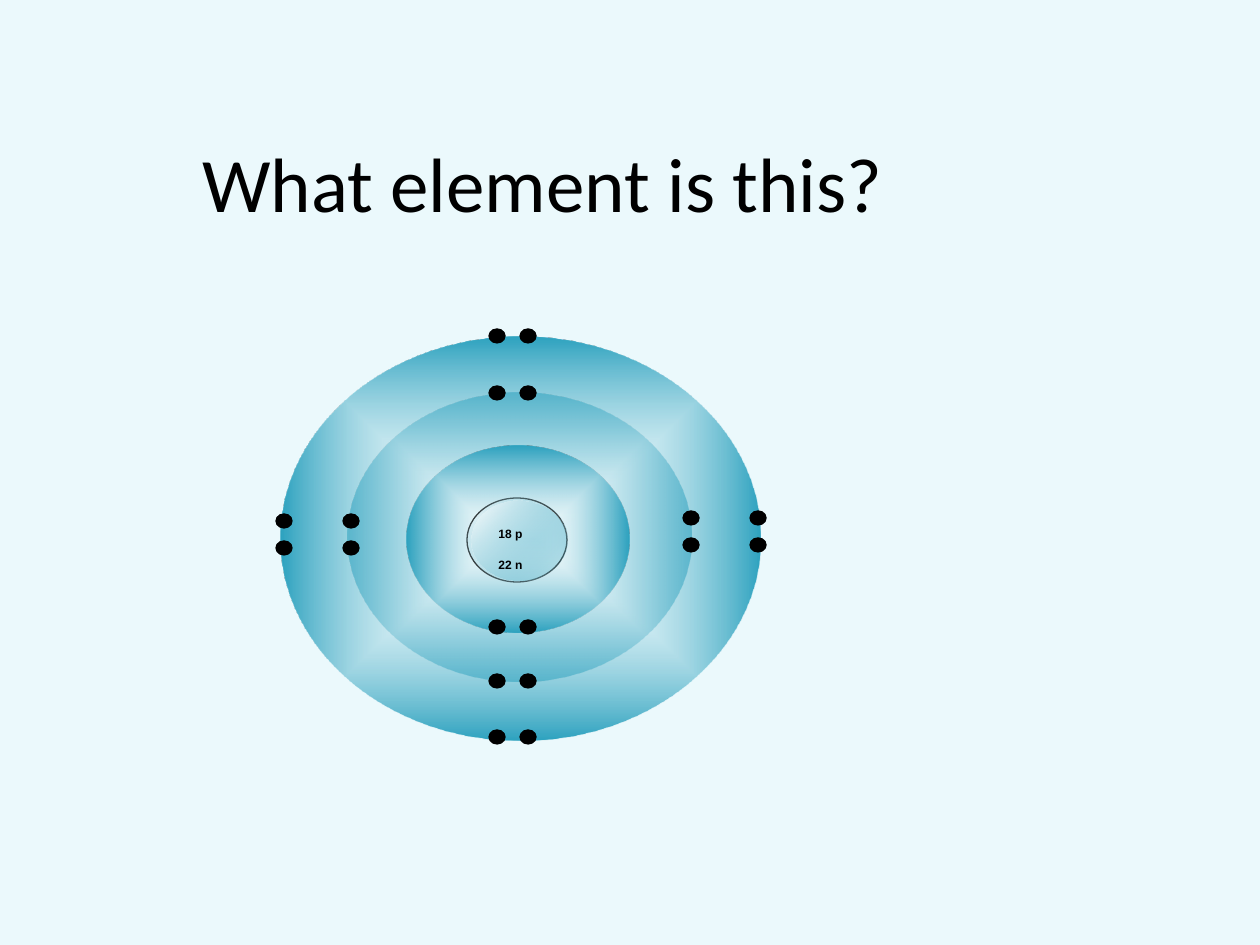
from itertools import product

from lxml.etree import SubElement
from pptx import Presentation
from pptx.dml.color import RGBColor
from pptx.enum.shapes import MSO_SHAPE
from pptx.enum.text import MSO_ANCHOR, MSO_AUTO_SIZE, PP_ALIGN
from pptx.oxml import parse_xml
from pptx.oxml.ns import nsdecls
from pptx.util import Emu, Pt

SCALE = 914400 / 126
BACKGROUND = RGBColor(0xEB, 0xF9, 0xFC)
BLACK = RGBColor(0, 0, 0)
WHITE = RGBColor(0xFF, 0xFF, 0xFF)
TEAL = RGBColor(0x2D, 0xA2, 0xBF)
CENTRE_OUT = ('<a:path path="shape"><a:fillToRect l="50000" t="50000" '
              'r="50000" b="50000"/></a:path>')
DIAGONAL = '<a:lin ang="2700000" scaled="1"/>'


def add_ellipse(shapes, *box):
    shape = shapes.add_shape(MSO_SHAPE.OVAL, *[Emu(round(px * SCALE)) for px in box])
    shape.shadow.inherit = False
    shape.line.fill.background()
    return shape


def fill_gradient(shape, white_alpha, teal_alpha, direction):
    gradient = parse_xml(
        f'<a:gradFill {nsdecls("a")} rotWithShape="1"><a:gsLst/>{direction}</a:gradFill>')
    for position, color, alpha in ((0, WHITE, white_alpha), (100, TEAL, teal_alpha)):
        stop = SubElement(gradient[0], gradient[0].tag.replace("gsLst", "gs"),
                          pos=str(position * 1000))
        stop.append(parse_xml(f'<a:srgbClr {nsdecls("a")} val="{color}">'
                              f'<a:alpha val="{alpha * 1000}"/></a:srgbClr>'))
    shape._element.spPr.find("{*}prstGeom").addnext(gradient)


presentation = Presentation()
presentation.slide_width = Emu(round(1260 * SCALE))
presentation.slide_height = Emu(round(945 * SCALE))
slide = presentation.slides.add_slide(presentation.slide_layouts[6])
slide.background.fill.solid()
slide.background.fill.fore_color.rgb = BACKGROUND

title = slide.shapes.add_textbox(*[Emu(round(px * SCALE)) for px in (165, 126, 756, 111)])
title.text_frame.word_wrap = True
title.text_frame.vertical_anchor = MSO_ANCHOR.MIDDLE
paragraph = title.text_frame.paragraphs[0]
paragraph.text = "What element is this?"
paragraph.alignment = PP_ALIGN.CENTER
paragraph.font.size = Pt(44)
paragraph.font.name = "Calibri"
paragraph.font.color.rgb = BLACK

atom = slide.shapes.add_group_shape().shapes

middle_shell = add_ellipse(atom, 348, 393, 343, 289)
fill_gradient(middle_shell, 6, 100, CENTRE_OUT)
outer_shell = add_ellipse(atom, 281, 337, 479, 403)
fill_gradient(outer_shell, 0, 100, CENTRE_OUT)
nucleus = add_ellipse(atom, 467, 498, 100, 84)
fill_gradient(nucleus, 100, 6, DIAGONAL)
nucleus.line.color.rgb = BLACK
nucleus.line.width = Pt(0.75)
inner_shell = add_ellipse(atom, 407, 446, 222, 186)
fill_gradient(inner_shell, 0, 100, CENTRE_OUT)
nucleus_glow = add_ellipse(atom, 471, 501, 95, 79)
fill_gradient(nucleus_glow, 100, 6, DIAGONAL)

electrons = [(left, top, 16, 14, 0)
             for top, left in product((620, 674, 386, 730, 329), (489, 520))]
for lefts, tops in (((344, 277), (513, 540)), ((684, 751), (510, 537))):
    electrons += [(left, top, 14, 16, 90) for left, top in product(lefts, tops)]
for *box, rotation in electrons:
    electron = add_ellipse(atom, *box)
    electron.rotation = rotation
    electron.fill.solid()
    electron.fill.fore_color.rgb = BLACK
    electron.line.color.rgb = BLACK
    electron.line.width = Pt(0.75)

label = atom.add_textbox(*[Emu(round(px * SCALE)) for px in (486, 507, 163, 68)])
frame = label.text_frame
frame.word_wrap = True
frame.auto_size = MSO_AUTO_SIZE.SHAPE_TO_FIT_TEXT
frame.text = "18 p\n22 n"
for paragraph, baseline in zip(frame.paragraphs, (-23, 24)):
    paragraph.space_before = Pt(7)
    paragraph.font.size = Pt(12)
    paragraph.font.name = "Arial"
    paragraph.font.bold = True
    paragraph.font.color.rgb = BLACK
    paragraph.runs[0].font._element.set("baseline", str(baseline * 1000))

presentation.save("out.pptx")
